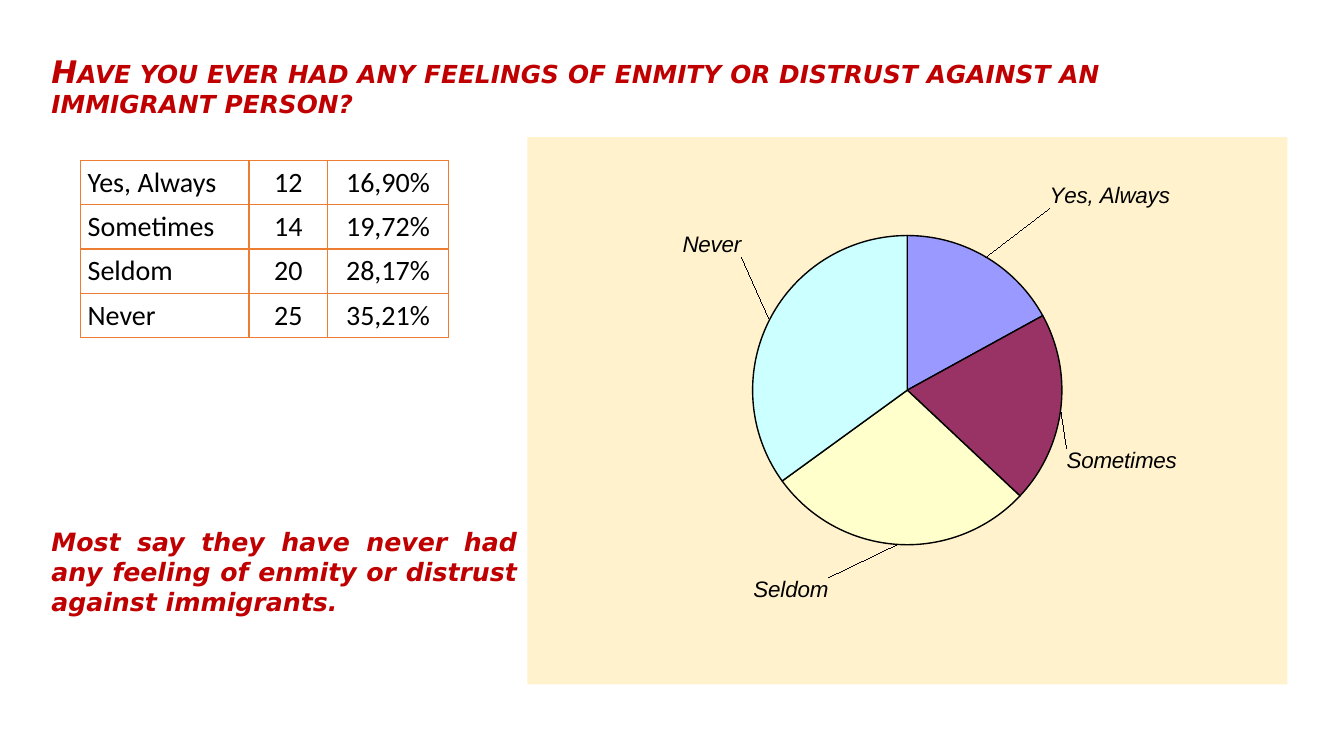
from copy import deepcopy

from lxml.etree import SubElement
from pptx import Presentation
from pptx.chart.data import CategoryChartData
from pptx.dml.color import RGBColor
from pptx.enum.chart import XL_CHART_TYPE as ChartType, XL_LABEL_POSITION as LabelPosition
from pptx.enum.text import MSO_ANCHOR as Anchor, MSO_AUTO_SIZE as AutoSize, PP_ALIGN as Align
from pptx.oxml import parse_xml
from pptx.oxml.ns import nsdecls, qn
from pptx.util import Inches, Pt

COLORS = {
    "accent": "C00000",
    "text": "000000",
    "border": "ED7D31",
    "panel": "FFF2CC",
    "always": "9999FF",
    "sometimes": "993366",
    "seldom": "FFFFCC",
    "never": "CCFFFF",
}
COLUMNS, ROWS = 100, 75

ANSWERS = [
    ("Yes, Always", "12", "16,90%"),
    ("Sometimes", "14", "19,72%"),
    ("Seldom", "20", "28,17%"),
    ("Never", "25", "35,21%"),
]
SLICES = [
    (17, "always", (0.08, -0.08)),
    (20, "sometimes", (0, 0.07)),
    (28, "seldom", (-0.14, 0.05)),
    (35, "never", (-0.03, -0.11)),
]


def rgb(name):
    return RGBColor.from_string(COLORS[name])


def manual_layout(**settings):
    items = "".join(f'<c:{key} val="{value}"/>' for key, value in settings.items())
    return parse_xml(
        f'<c:layout {nsdecls("c")}><c:manualLayout>{items}</c:manualLayout></c:layout>'
    )


class SurveySlide:
    heading_font = "DejaVu Sans"
    table_font = "Calibri"
    chart_font = "Arial"

    def __init__(self, deck):
        self.column = deck.slide_width / COLUMNS
        self.row = deck.slide_height / ROWS
        self.slide = deck.slides.add_slide(deck.slide_layouts[5])

    def area(self, left, top, width, height):
        return (
            round(left * self.column),
            round(top * self.row),
            round(width * self.column),
            round(height * self.row),
        )

    def style(self, font, face, size, color, bold=False, italic=False):
        font.name, font.size = face, Pt(size)
        font.bold, font.italic = bold, italic
        font.color.rgb = rgb(color)

    def heading_run(self, paragraph, text, size):
        run = paragraph.add_run()
        run.text = text
        self.style(run.font, self.heading_font, size, "accent", True, True)
        return run

    def title(self, text, *cells):
        question = self.slide.shapes.title
        question.left, question.top, question.width, question.height = self.area(*cells)
        frame = question.text_frame
        frame.auto_size, frame.vertical_anchor = AutoSize.NONE, Anchor.TOP
        paragraph = frame.paragraphs[0]
        paragraph.alignment, paragraph.line_spacing = Align.LEFT, 0.8
        run = self.heading_run(paragraph, text, 22.2)
        run.font._element.set("cap", "small")

    def finding(self, text, *cells):
        frame = self.slide.shapes.add_textbox(*self.area(*cells)).text_frame
        frame.word_wrap = True
        frame.auto_size = AutoSize.SHAPE_TO_FIT_TEXT
        paragraph = frame.paragraphs[0]
        paragraph.alignment = Align.JUSTIFY
        self.heading_run(paragraph, text, 18)

    def border(self, cell):
        properties = cell._tc.get_or_add_tcPr()
        for place, side in enumerate("LRTB"):
            properties.insert(place, parse_xml(
                f'<a:ln{side} {nsdecls("a")} w="12700"><a:solidFill>'
                f'<a:srgbClr val="{COLORS["border"]}"/></a:solidFill></a:ln{side}>'
            ))

    def table(self, answers, left, top, widths, height):
        cells = self.area(left, top, sum(widths), height * len(answers))
        table = self.slide.shapes.add_table(len(answers), len(widths), *cells).table
        table.first_row = table.horz_banding = False
        for column, width in zip(table.columns, widths):
            column.width = round(width * self.column)
        for r, answer in enumerate(answers):
            for c, text in enumerate(answer):
                cell = table.cell(r, c)
                cell.fill.background()
                cell.vertical_anchor = Anchor.MIDDLE
                cell.margin_left = cell.margin_right = Inches(0.07)
                cell.margin_top = cell.margin_bottom = 0
                paragraph = cell.text_frame.paragraphs[0]
                paragraph.alignment = Align.CENTER if c else Align.LEFT
                run = paragraph.add_run()
                run.text = text
                self.style(run.font, self.table_font, 20, "text")
                self.border(cell)

    def pie(self, names, slices, *cells):
        data = CategoryChartData()
        data.categories = names
        data.add_series("Series 1", [value for value, _, _ in slices])
        chart = self.slide.shapes.add_chart(ChartType.PIE, *self.area(*cells), data).chart
        chart.has_legend = chart.has_title = False
        self.style(chart.font, self.chart_font, 10, "text")
        plot = chart.plots[0]
        plot.vary_by_categories = True
        series = plot.series[0]
        for index, (_, color, _) in enumerate(slices):
            form = series.points[index].format
            form.fill.solid()
            form.fill.fore_color.rgb = rgb(color)
            form.line.color.rgb = rgb("text")
            form.line.width = Pt(1)
        self.slice_labels(series, [offset for _, _, offset in slices])
        self.panel(chart)

    def slice_labels(self, series, offsets):
        labels = series.data_labels
        labels.show_value, labels.show_category_name = False, True
        labels.position = LabelPosition.OUTSIDE_END
        self.style(labels.font, self.chart_font, 16, "text", italic=True)
        group = labels._element
        leader = group.find(qn("c:showLeaderLines"))
        if leader is None:
            leader = SubElement(group, qn("c:showLeaderLines"))
        leader.set("val", "1")
        shared = [part for part in group if part is not leader]
        for index, (x, y) in enumerate(offsets):
            label = parse_xml(f'<c:dLbl {nsdecls("c")}><c:idx val="{index}"/></c:dLbl>')
            label.append(manual_layout(x=x, y=y))
            label.extend([deepcopy(part) for part in shared])
            group.insert(index, label)

    def panel(self, chart):
        body = chart._chartSpace.find(qn("c:chart"))
        body.addnext(parse_xml(
            f'<c:spPr {nsdecls("c", "a")}><a:solidFill><a:srgbClr val="{COLORS["panel"]}"/>'
            "</a:solidFill><a:ln><a:noFill/></a:ln></c:spPr>"
        ))
        plot_area = body.find(qn("c:plotArea"))
        for layout in plot_area.findall(qn("c:layout")):
            plot_area.remove(layout)
        plot_area.insert(0, manual_layout(
            layoutTarget="inner", xMode="edge", yMode="edge", x=0.19, y=0.18, w=0.62, h=0.565
        ))


def main():
    deck = Presentation()
    deck.slide_width, deck.slide_height = Inches(13.33), Inches(7.5)
    survey = SurveySlide(deck)
    survey.title(
        "Have you ever had any feelings of enmity or distrust against an immigrant person?",
        3.08, 5.4, 91.9, 6.9,
    )
    survey.finding(
        "Most say they have never had any feeling of enmity or distrust against immigrants.",
        3.08, 51.7, 36.15, 10.1,
    )
    survey.table(ANSWERS, 6, 15.9, (12.53, 5.85, 9), 4.4)
    survey.pie([answer[0] for answer in ANSWERS], SLICES, 39.23, 13.6, 56.55, 54.3)
    deck.save("out.pptx")


if __name__ == "__main__":
    main()
